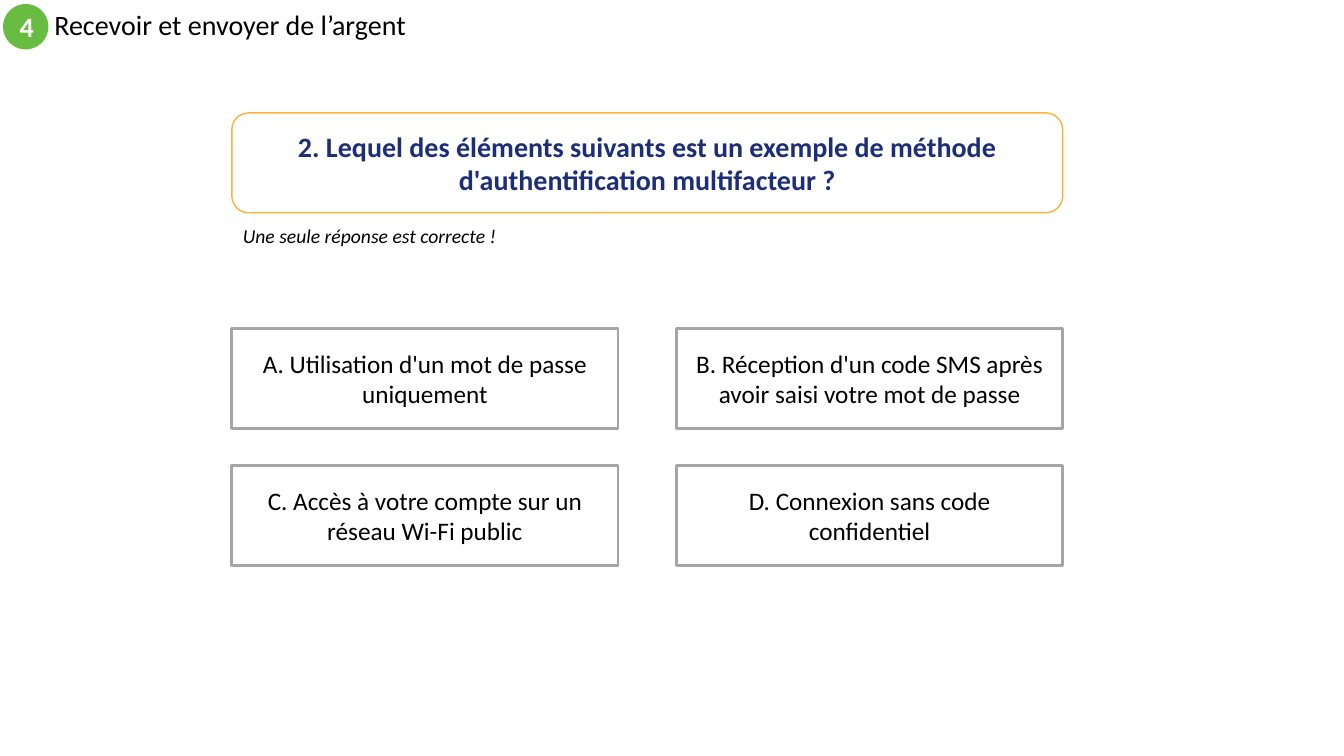
from dataclasses import dataclass

from pptx import Presentation
from pptx.dml.color import RGBColor
from pptx.enum.shapes import MSO_SHAPE as Preset
from pptx.enum.text import MSO_ANCHOR as Anchor, PP_ALIGN as Align
from pptx.util import Emu, Pt

EMU_PER_PX = 9144  # 100 px to the inch
FONT = "Calibri"

WHITE = RGBColor(0xFF, 0xFF, 0xFF)
BLACK = RGBColor(0x00, 0x00, 0x00)
GREEN = RGBColor(0x68, 0xBC, 0x42)
ORANGE = RGBColor(0xFC, 0xB1, 0x3A)
NAVY = RGBColor(0x1C, 0x2E, 0x78)
GREY = RGBColor(0xA5, 0xA5, 0xA5)


@dataclass(frozen=True)
class Box:
    left: int
    top: int
    width: int
    height: int

    def emu(self) -> tuple[Emu, ...]:
        sides = (self.left, self.top, self.width, self.height)
        return tuple(Emu(side * EMU_PER_PX) for side in sides)


@dataclass(frozen=True)
class Answer:
    text: str
    column: int
    row: int

    def box(self) -> Box:
        return Box(230 + 441 * self.column, 326 + 136 * self.row, 383, 99)


ANSWERS = [
    Answer("A. Utilisation d'un mot de passe uniquement", 0, 0),
    Answer("B. Réception d'un code SMS après avoir saisi votre mot de passe", 1, 0),
    Answer("C. Accès à votre compte sur un réseau Wi-Fi public", 0, 1),
    Answer("D. Connexion sans code confidentiel", 1, 1),
]


def write_text(shape, text: str, *, size: int, color: RGBColor = BLACK,
               bold: bool = False, italic: bool = False, align=Align.CENTER,
               anchor=Anchor.MIDDLE, line_spacing: float = 1.0) -> None:
    frame = shape.text_frame
    frame.word_wrap = True
    frame.vertical_anchor = anchor
    paragraph = frame.paragraphs[0]
    paragraph.alignment = align
    paragraph.line_spacing = line_spacing
    run = paragraph.add_run()
    run.text = text
    font = run.font
    font.name, font.size = FONT, Pt(size)
    font.bold, font.italic = bold, italic
    font.color.rgb = color


def add_panel(slide, preset, box: Box, fill: RGBColor,
              line: RGBColor | None = None, line_width: int = 1):
    shape = slide.shapes.add_shape(preset, *box.emu())
    shape.shadow.inherit = False
    shape.fill.solid()
    shape.fill.fore_color.rgb = fill
    if line is None:
        shape.line.fill.background()
    else:
        shape.line.color.rgb = line
        shape.line.width = Pt(line_width)
    return shape


def add_label(slide, box: Box):
    return slide.shapes.add_textbox(*box.emu())


def main() -> None:
    presentation = Presentation()
    presentation.slide_width = Emu(1333 * EMU_PER_PX)
    presentation.slide_height = Emu(750 * EMU_PER_PX)
    slide = presentation.slides.add_slide(presentation.slide_layouts[6])

    # Section number and title
    badge = add_panel(slide, Preset.OVAL, Box(3, 4, 45, 45), GREEN)
    write_text(badge, "4", size=20, color=WHITE, bold=True)
    title = add_label(slide, Box(44, 4, 800, 45))
    write_text(title, "Recevoir et envoyer de l’argent", size=20,
               align=Align.LEFT, line_spacing=0.9)

    # Question and hint
    question = add_panel(slide, Preset.ROUNDED_RECTANGLE,
                         Box(230, 112, 824, 99), WHITE, ORANGE)
    write_text(question, "2. Lequel des éléments suivants est un exemple de "
               "méthode d'authentification multifacteur ?",
               size=20, color=NAVY, bold=True)
    hint = add_label(slide, Box(231, 217, 318, 34))
    write_text(hint, "Une seule réponse est correcte !", size=14, italic=True,
               align=Align.LEFT, anchor=Anchor.TOP)

    # Grid of answers
    for answer in ANSWERS:
        panel = add_panel(slide, Preset.RECTANGLE, answer.box(), WHITE, GREY, 2)
        write_text(panel, answer.text, size=18)

    presentation.save("out.pptx")


if __name__ == "__main__":
    main()
